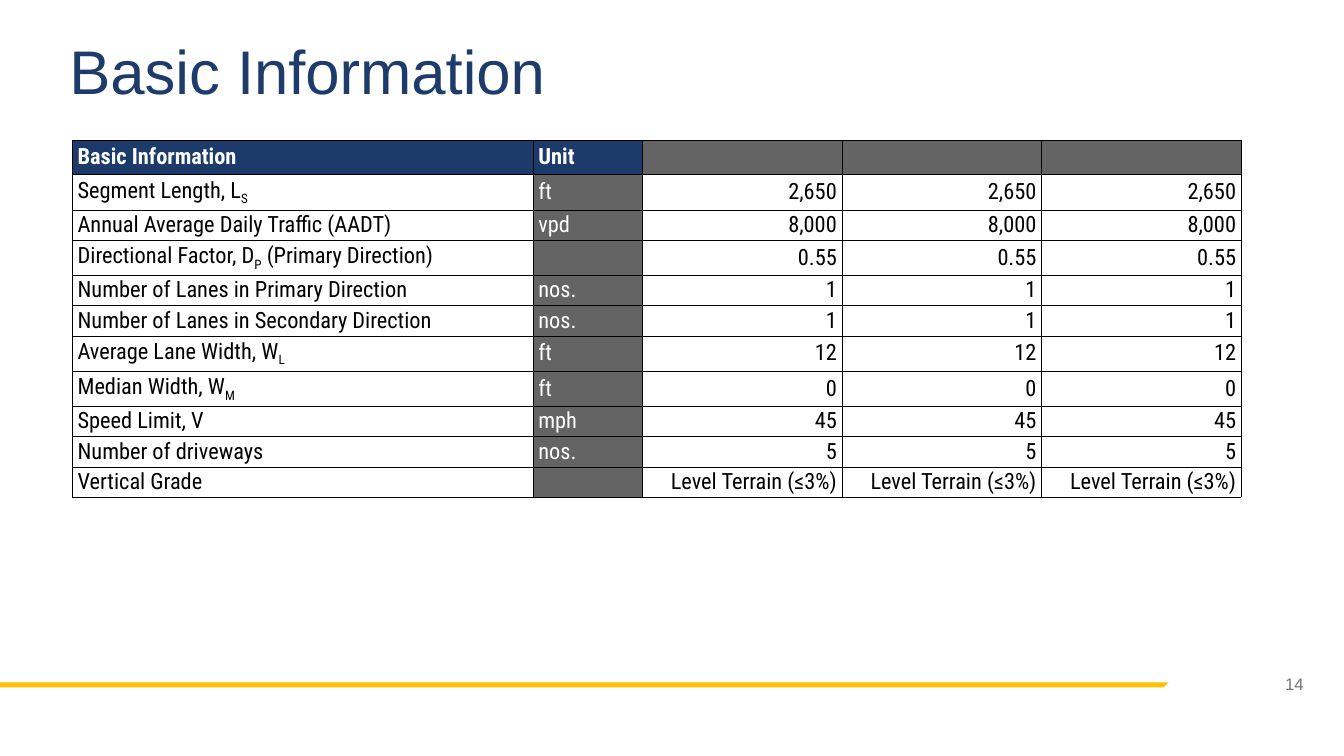
from lxml.etree import SubElement
from pptx import Presentation
from pptx.dml.color import RGBColor
from pptx.enum.text import MSO_ANCHOR as Anchor, PP_ALIGN as Align
from pptx.oxml.ns import qn
from pptx.util import Inches, Pt

NAVY = RGBColor(0x1C, 0x3B, 0x6B)
TITLE_NAVY = RGBColor(0x1D, 0x3B, 0x6B)
GRAY = RGBColor(0x64, 0x64, 0x64)
NUMBER_GRAY = RGBColor(0x75, 0x75, 0x75)
GOLD = RGBColor(0xFF, 0xC0, 0x00)
WHITE = RGBColor(0xFF, 0xFF, 0xFF)
BLACK = RGBColor(0, 0, 0)

SITES = 3
COLUMN_WIDTHS = [4.57, 1.08] + [1.98] * SITES
HEADER_HEIGHT, PLAIN_HEIGHT, SUBSCRIPT_HEIGHT = 0.34, 0.3, 0.35

# Label pieces (every second piece is a subscript), unit, value at each site
ROWS = [
    (["Segment Length, L", "S"], "ft", "2,650"),
    (["Annual Average Daily Traffic (AADT)"], "vpd", "8,000"),
    (["Directional Factor, D", "P", " (Primary Direction)"], "", "0.55"),
    (["Number of Lanes in Primary Direction"], "nos.", "1"),
    (["Number of Lanes in Secondary Direction"], "nos.", "1"),
    (["Average Lane Width, W", "L"], "ft", "12"),
    (["Median Width, W", "M"], "ft", "0"),
    (["Speed Limit, V"], "mph", "45"),
    (["Number of driveways"], "nos.", "5"),
    (["Vertical Grade"], "", "Level Terrain (≤3%)"),
]


class SlideBuilder:
    heading_font = "Arial"
    table_font = "Roboto Condensed"
    table_size = 16

    def __init__(self, slide):
        self.slide = slide

    def style(self, paragraph, font, size, color, align, bold=False):
        paragraph.alignment = align
        paragraph.font.name = font
        paragraph.font.size = Pt(size)
        paragraph.font.bold = bold
        paragraph.font.color.rgb = color

    def text(self, words, left, top, width, height, size, color, align=Align.LEFT):
        frame = self.slide.shapes.add_textbox(
            Inches(left), Inches(top), Inches(width), Inches(height)).text_frame
        frame.word_wrap = True
        frame.vertical_anchor = Anchor.MIDDLE
        paragraph = frame.paragraphs[0]
        paragraph.text = words
        paragraph.line_spacing = 0.9
        self.style(paragraph, self.heading_font, size, color, align)

    def outline(self, points, color):
        corners = [(Inches(x), Inches(y)) for x, y in points]
        builder = self.slide.shapes.build_freeform(*corners[0])
        builder.add_line_segments(corners[1:], close=True)
        band = builder.convert_to_shape()
        band.shadow.inherit = False
        band.fill.solid()
        band.fill.fore_color.rgb = color
        band.line.fill.background()

    def table(self, left, top, widths, heights):
        table = self.slide.shapes.add_table(
            len(heights), len(widths), Inches(left), Inches(top),
            Inches(sum(widths)), Inches(sum(heights))).table
        for column, width in zip(table.columns, widths):
            column.width = Inches(width)
        for row, height in zip(table.rows, heights):
            row.height = Inches(height)
        return table

    def cell(self, cell, pieces, fill, color, align=Align.LEFT, bold=False):
        cell.margin_left = cell.margin_right = Inches(0.05)
        cell.margin_top = cell.margin_bottom = 0
        cell.vertical_anchor = Anchor.MIDDLE
        self.borders(cell)
        cell.fill.solid()
        cell.fill.fore_color.rgb = fill
        paragraph = cell.text_frame.paragraphs[0]
        self.style(paragraph, self.table_font, self.table_size, color, align, bold)
        for index, piece in enumerate(pieces):
            run = paragraph.add_run()
            run.text = piece
            if index % 2:
                run._r.get_or_add_rPr().set("baseline", "-25000")

    def borders(self, cell):
        properties = cell._tc.get_or_add_tcPr()
        for side in ("a:lnL", "a:lnR", "a:lnT", "a:lnB"):
            line = SubElement(properties, qn(side), w=str(Pt(0.25)))
            solid = SubElement(line, qn("a:solidFill"))
            SubElement(solid, qn("a:srgbClr"), val=str(BLACK))


def main():
    deck = Presentation()
    deck.slide_width, deck.slide_height = Inches(13.33), Inches(7.5)
    page = SlideBuilder(deck.slides.add_slide(deck.slide_layouts[6]))

    # Footer band, title and slide number
    page.outline([(-0.01, 6.82), (0, 6.77), (11.59, 6.77), (11.54, 6.82)], GOLD)
    page.text("Basic Information", 0.59, 0.18, 11.5, 1.12, 44, TITLE_NAVY)
    page.text("14", 12.19, 6.67, 0.84, 0.26, 12, NUMBER_GRAY, Align.RIGHT)

    # Table header
    heights = [HEADER_HEIGHT] + [
        SUBSCRIPT_HEIGHT if len(label) > 1 else PLAIN_HEIGHT for label, _, _ in ROWS]
    table = page.table(0.72, 1.39, COLUMN_WIDTHS, heights)
    for column, heading in enumerate(["Basic Information", "Unit"]):
        page.cell(table.cell(0, column), [heading], NAVY, WHITE, bold=True)
    for site in range(SITES):
        page.cell(table.cell(0, 2 + site), [], GRAY, WHITE)

    # Table body
    for row, (label, unit, value) in enumerate(ROWS, start=1):
        page.cell(table.cell(row, 0), label, WHITE, BLACK)
        page.cell(table.cell(row, 1), [unit] if unit else [], GRAY, WHITE)
        for site in range(SITES):
            page.cell(table.cell(row, 2 + site), [value], WHITE, BLACK, Align.RIGHT)

    deck.save("out.pptx")


if __name__ == "__main__":
    main()
